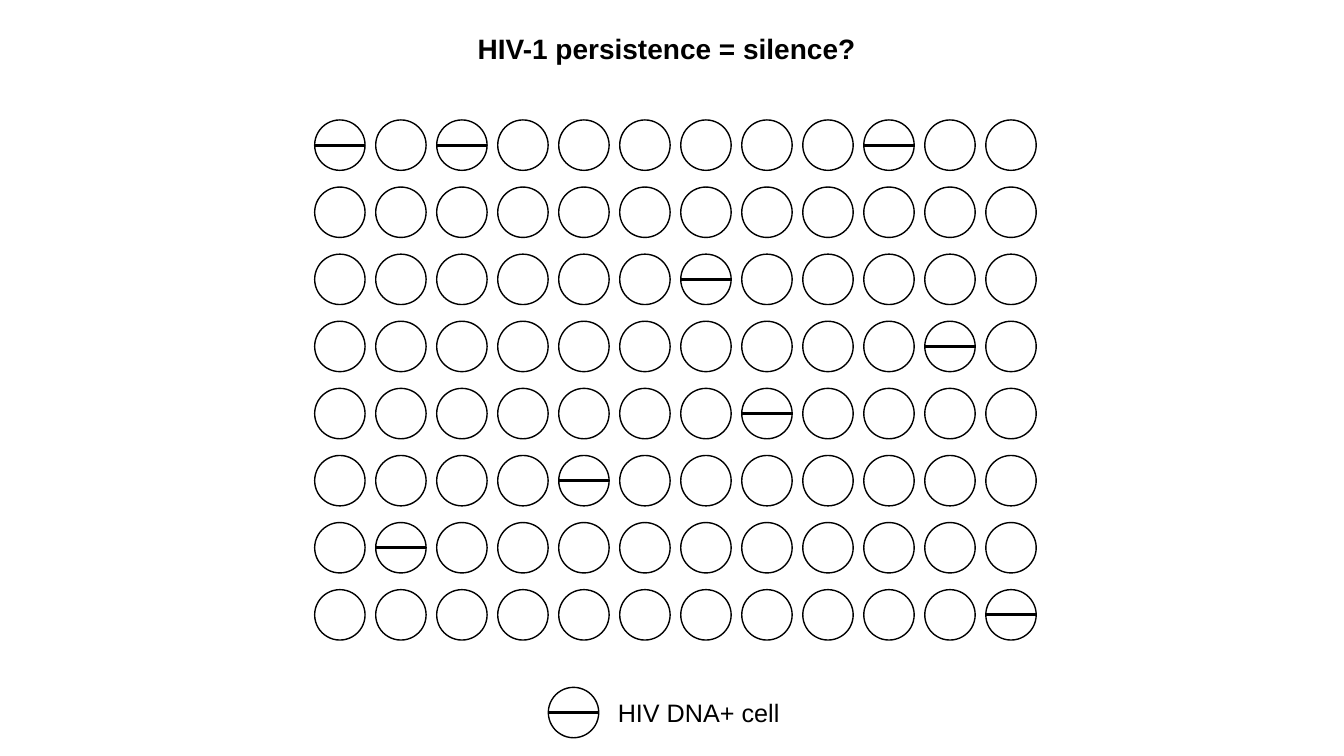
from lxml import etree
from pptx import Presentation
from pptx.dml.color import RGBColor
from pptx.enum.shapes import MSO_CONNECTOR, MSO_SHAPE
from pptx.enum.text import MSO_ANCHOR, MSO_AUTO_SIZE, PP_ALIGN
from pptx.oxml.ns import qn
from pptx.util import Pt

OVAL = MSO_SHAPE.OVAL
STRAIGHT = MSO_CONNECTOR.STRAIGHT
MIDDLE = MSO_ANCHOR.MIDDLE
NO_AUTOFIT = MSO_AUTO_SIZE.NONE
LEFT, CENTER = PP_ALIGN.LEFT, PP_ALIGN.CENTER

TITLE = "HIV-1 persistence = silence? "
LEGEND = "HIV DNA+ cell"
ROWS, COLUMNS = 8, 12
# (row, column) of each cell that carries HIV DNA
DNA_CELLS = [(0, 0), (0, 2), (0, 9), (2, 6), (3, 10), (4, 7), (5, 4), (6, 1), (7, 11)]

COLORS = {"ink": "000000", "background": "FFFFFF"}
SLIDE_SIZE = (960, 540)
TITLE_BOX = (149, 18.9, 660, 31.5)
LEGEND_BOX = (434.2, 494.5, 131, 29)
LEGEND_CELL = (391.7, 491)
GRID_LEFT, GRID_TOP = 224.8, 85.7
COLUMN_STEP, ROW_STEP = 43.58, 47.93
CELL_SIZE = 36
OUTLINE_WIDTH, DNA_WIDTH = 1, 2
TITLE_FONT = {"name": "Arial", "size": Pt(20), "bold": True}
LEGEND_FONT = {"name": "Arial", "size": Pt(18), "bold": False}


def set_line(line, width):
    line.color.rgb = RGBColor.from_string(COLORS["ink"])
    line.width = Pt(width)


def add_cell(group, left, top):
    cell = group.shapes.add_shape(OVAL, Pt(left), Pt(top), Pt(CELL_SIZE), Pt(CELL_SIZE))
    cell.shadow.inherit = False
    cell.fill.background()
    set_line(cell.line, OUTLINE_WIDTH)


def add_dna(group, left, top):
    """Draw the DNA strand across the middle of the cell at left, top."""
    middle = top + CELL_SIZE / 2
    strand = group.shapes.add_connector(
        STRAIGHT, Pt(left), Pt(middle), Pt(left + CELL_SIZE), Pt(middle))
    set_line(strand.line, DNA_WIDTH)
    etree.SubElement(strand._element.spPr, qn("a:effectLst"))


def write_text(shape, text, font_format, alignment, wrap):
    frame = shape.text_frame
    frame.text = text
    frame.word_wrap = wrap
    frame.auto_size = NO_AUTOFIT
    frame.vertical_anchor = MIDDLE
    paragraph = frame.paragraphs[0]
    paragraph.alignment = alignment
    font = paragraph.runs[0].font
    for name, value in font_format.items():
        setattr(font, name, value)
    font.color.rgb = RGBColor.from_string(COLORS["ink"])


def cell_position(row, column):
    return GRID_LEFT + column * COLUMN_STEP, GRID_TOP + row * ROW_STEP


def main():
    presentation = Presentation()
    presentation.slide_width, presentation.slide_height = map(Pt, SLIDE_SIZE)
    slide = presentation.slides.add_slide(presentation.slide_layouts[5])
    slide.background.fill.solid()
    slide.background.fill.fore_color.rgb = RGBColor.from_string(COLORS["background"])

    title = slide.shapes.title
    title.left, title.top, title.width, title.height = map(Pt, TITLE_BOX)
    write_text(title, TITLE, TITLE_FONT, CENTER, True)

    cell_grid = slide.shapes.add_group_shape()
    for row in range(ROWS):
        for column in range(COLUMNS):
            add_cell(cell_grid, *cell_position(row, column))
    for row, column in DNA_CELLS:
        add_dna(cell_grid, *cell_position(row, column))

    legend = slide.shapes.add_group_shape()
    add_cell(legend, *LEGEND_CELL)
    add_dna(legend, *LEGEND_CELL)
    label = legend.shapes.add_textbox(*map(Pt, LEGEND_BOX))
    write_text(label, LEGEND, LEGEND_FONT, LEFT, False)

    presentation.save("out.pptx")


if __name__ == "__main__":
    main()
